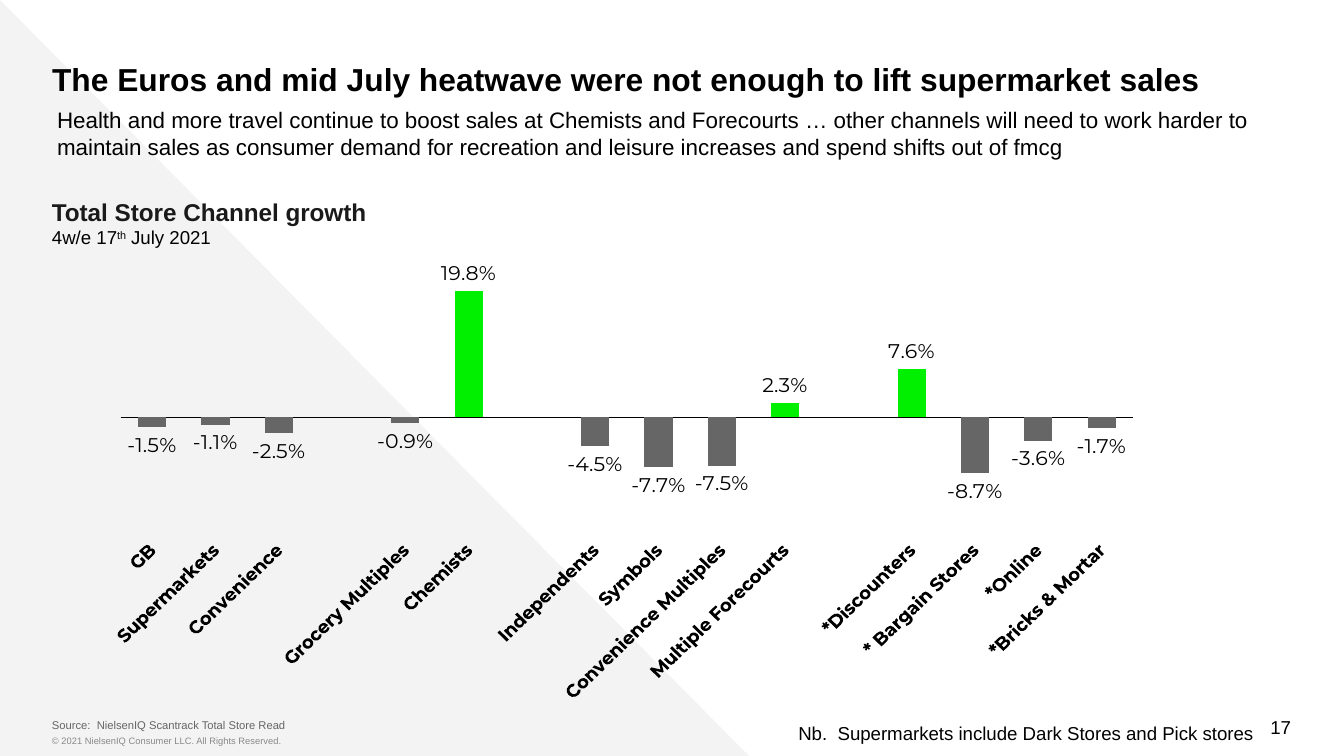
"""Build the slide on channel growth with its column chart."""
from lxml import etree
from pptx import Presentation
from pptx.chart.data import CategoryChartData
from pptx.dml.color import RGBColor
from pptx.enum.chart import (XL_CHART_TYPE, XL_LABEL_POSITION,
                             XL_TICK_LABEL_POSITION, XL_TICK_MARK)
from pptx.enum.shapes import MSO_SHAPE
from pptx.enum.text import MSO_ANCHOR, PP_ALIGN
from pptx.oxml.ns import qn
from pptx.util import Pt

COLUMNS = XL_CHART_TYPE.COLUMN_CLUSTERED
OUTSIDE_END = XL_LABEL_POSITION.OUTSIDE_END
LOW = XL_TICK_LABEL_POSITION.LOW
NO_TICK = XL_TICK_MARK.NONE
TRIANGLE = MSO_SHAPE.RIGHT_TRIANGLE
TOP, MIDDLE, BOTTOM = MSO_ANCHOR.TOP, MSO_ANCHOR.MIDDLE, MSO_ANCHOR.BOTTOM
LEFT, RIGHT = PP_ALIGN.LEFT, PP_ALIGN.RIGHT

BLACK = RGBColor(0x00, 0x00, 0x00)
INK = RGBColor(0x1A, 0x1A, 0x1A)
GREY = RGBColor(0x66, 0x66, 0x66)
PALE_GREY = RGBColor(0x88, 0x88, 0x88)
BACKDROP = RGBColor(0xF3, 0xF3, 0xF3)
GREEN = RGBColor(0x00, 0xF0, 0x00)

EMU_PER_PX = 914400 / 134.4
SLIDE_SIZE = (1344, 756)
BACKDROP_BOX = (0, 0, 751, 758)
CHART_BOX = (110, 230, 1055, 473)
PLOT_LAYOUT = {"layoutTarget": "inner", "xMode": "edge", "yMode": "edge",
               "x": 0.01, "y": 0.06, "w": 0.96, "h": 0.59}

TITLE = "The Euros and mid July heatwave were not enough to lift supermarket sales"
SUMMARY = ("Health and more travel continue to boost sales at Chemists and Forecourts … "
           "other channels will need to work harder to maintain sales as consumer demand "
           "for recreation and leisure increases and spend shifts out of fmcg")
HEADING = [
    ("Total Store Channel growth\n", {"size": 13, "bold": True, "color": INK}),
    ("4w/e 17", {}),
    ("th", {"superscript": True}),
    (" July 2021", {}),
]
TEXTS = [
    ("© 2021 NielsenIQ Consumer LLC. All Rights Reserved.", (52, 730, 745, 27),
     {"size": 5, "color": PALE_GREY}),
    ("17", (989, 707, 302, 40), {"align": RIGHT, "anchor": MIDDLE}),
    (HEADING, (52, 190, 559, 66), {}),
    (TITLE, (52, 47, 1285, 55), {"size": 17, "bold": True, "inset": (0, 13)}),
    ("Source:\u00a0 NielsenIQ Scantrack Total Store Read".replace("\u00a0", " "),
     (52, 712, 1199, 27),
     {"size": 6, "color": GREY, "anchor": BOTTOM, "inset": (0, 13)}),
    ("Nb.  Supermarkets include Dark Stores and Pick stores", (720, 715, 546, 36),
     {"align": RIGHT, "inset": (13, 7)}),
    (SUMMARY, (44, 99, 1270, 67), {"size": 12, "inset": (13, 7)}),
]
GROWTH = [
    ("GB", -0.015), ("Supermarkets", -0.011), ("Convenience", -0.025),
    ("", None),
    ("Grocery Multiples", -0.009), ("Chemists", 0.198),
    ("", None),
    ("Independents", -0.045), ("Symbols", -0.077),
    ("Convenience Multiples", -0.075), ("Multiple Forecourts", 0.023),
    ("", None),
    ("*Discounters", 0.076), ("* Bargain Stores", -0.087),
    ("*Online", -0.036), ("*Bricks & Mortar", -0.017),
]


def px(length):
    return round(length * EMU_PER_PX)


def style_font(font, size=10, color=BLACK, bold=False, name="Arial"):
    font.name, font.size, font.bold = name, Pt(size), bold
    font.color.rgb = color


def add_text(slide, text, box, align=LEFT, anchor=TOP, inset=(0, 7), **style):
    frame = slide.shapes.add_textbox(*map(px, box)).text_frame
    frame.word_wrap = True
    frame.vertical_anchor = anchor
    frame.margin_left = frame.margin_right = px(inset[0])
    frame.margin_top = frame.margin_bottom = px(inset[1])
    paragraph = frame.paragraphs[0]
    paragraph.alignment = align
    for words, changes in [(text, {})] if isinstance(text, str) else text:
        look = {**style, **changes}
        raised = look.pop("superscript", False)
        run = paragraph.add_run()
        run.text = words.rstrip("\n")
        style_font(run.font, **look)
        if raised:
            run.font._element.set("baseline", "30000")
        if words.endswith("\n"):
            paragraph.add_line_break()


def place_plot(chart):
    plot_area = chart._chartSpace.chart.plotArea
    for old_layout in plot_area.findall(qn("c:layout")):
        plot_area.remove(old_layout)
    layout = etree.Element(qn("c:layout"))
    manual = etree.SubElement(layout, qn("c:manualLayout"))
    for tag, value in PLOT_LAYOUT.items():
        etree.SubElement(manual, qn(f"c:{tag}")).set("val", str(value))
    plot_area.insert(0, layout)


def add_growth_chart(slide):
    growth_data = CategoryChartData(number_format="0.0%")
    growth_data.categories = [channel for channel, _ in GROWTH]
    growth_data.add_series("Series 1", [growth for _, growth in GROWTH])
    chart = slide.shapes.add_chart(COLUMNS, *map(px, CHART_BOX), growth_data).chart
    chart.has_legend = chart.has_title = False
    style_font(chart.font)
    place_plot(chart)

    channels = chart.category_axis
    channels.tick_label_position = LOW
    channels.major_tick_mark = channels.minor_tick_mark = NO_TICK
    channels.has_major_gridlines = False
    channels.format.line.color.rgb = BLACK
    channels.format.line.width = Pt(0.75)
    style_font(channels.tick_labels.font, bold=True, name="Montserrat")
    channels._element.find(qn("c:txPr")).find(qn("a:bodyPr")).set("rot", "-2700000")

    scale = chart.value_axis
    scale.has_major_gridlines = False
    scale.minimum_scale, scale.maximum_scale = -0.17, 0.25
    scale.visible = False

    plot = chart.plots[0]
    plot.gap_width = 125
    plot.vary_by_categories = False
    columns = plot.series[0]
    columns.invert_if_negative = False
    columns.format.fill.solid()
    columns.format.fill.fore_color.rgb = GREY
    for index, (_, growth) in enumerate(GROWTH):
        if growth and growth > 0:
            fill = columns.points[index].format.fill
            fill.solid()
            fill.fore_color.rgb = GREEN
    labels = columns.data_labels
    labels.show_value = True
    labels.position = OUTSIDE_END
    labels.number_format, labels.number_format_is_linked = "0.0%", False
    style_font(labels.font, size=11, name="Montserrat")


def main():
    deck = Presentation()
    deck.slide_width, deck.slide_height = map(px, SLIDE_SIZE)
    slide = deck.slides.add_slide(deck.slide_layouts[6])
    backdrop = slide.shapes.add_shape(TRIANGLE, *map(px, BACKDROP_BOX))
    backdrop.shadow.inherit = False
    backdrop.fill.solid()
    backdrop.fill.fore_color.rgb = BACKDROP
    backdrop.line.fill.background()
    add_growth_chart(slide)
    for text, box, style in TEXTS:
        add_text(slide, text, box, **style)
    deck.save("out.pptx")


if __name__ == "__main__":
    main()
